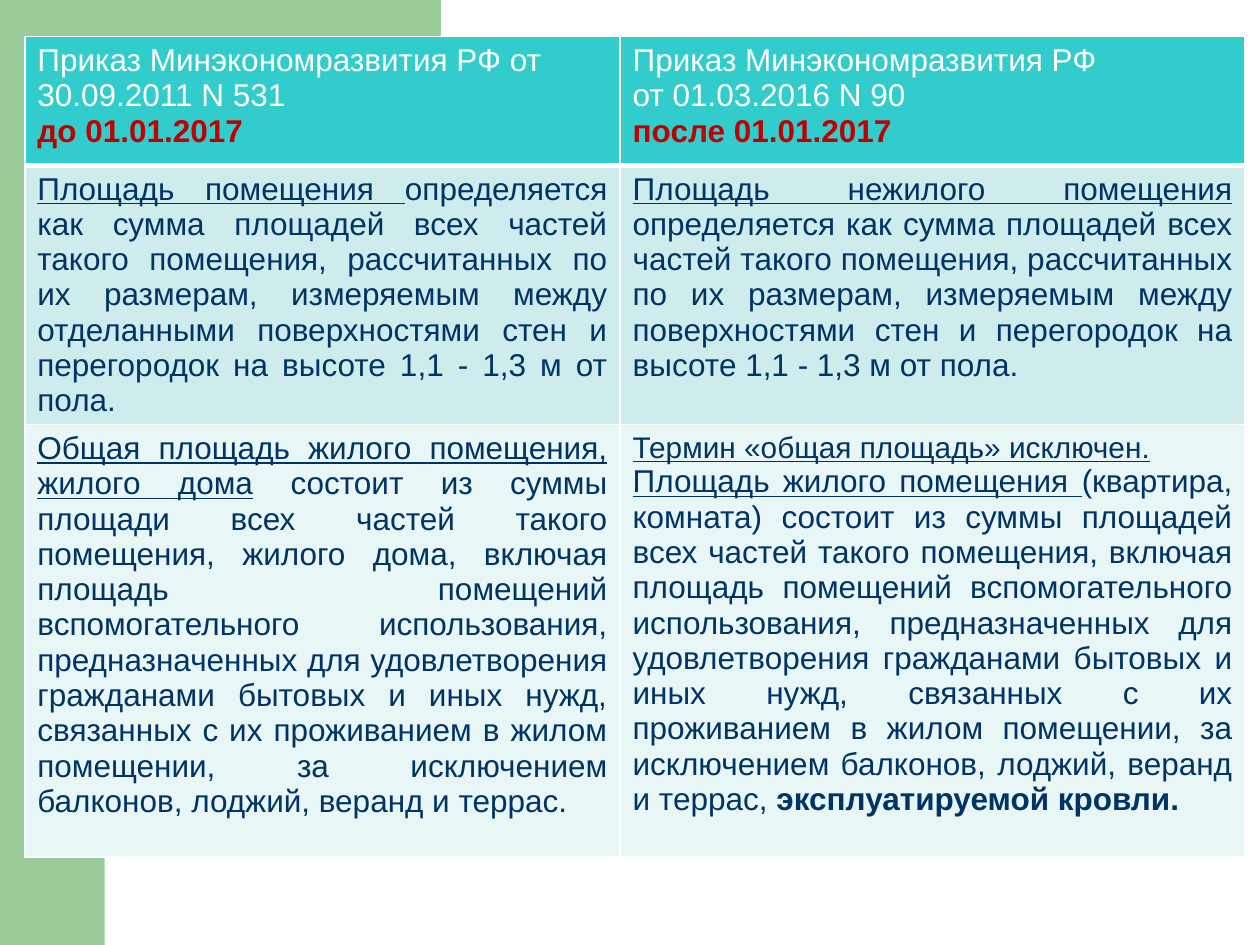
from lxml import etree
from pptx import Presentation
from pptx import util as u
from pptx.dml.color import RGBColor
from pptx.enum import shapes, text
from pptx.oxml.ns import qn

WHITE = RGBColor(0xFF, 0xFF, 0xFF)
NAVY = RGBColor(0x00, 0x33, 0x66)
RED = RGBColor(0xC0, 0x00, 0x00)
GREEN = RGBColor(0x99, 0xCC, 0x99)
TURQUOISE = RGBColor(0x33, 0xCC, 0xCC)
AQUA = RGBColor(0xCE, 0xEC, 0xEC)
PALE_AQUA = RGBColor(0xE8, 0xF6, 0xF6)

HEAD = {"color": WHITE}
DATE = {"color": RED, "bold": True}
TERM = {"underline": True}
SMALL_TERM = {"underline": True, "size": u.Pt(17)}
STRONG = {"bold": True}
PLAIN = {}

# Each cell is a list of paragraphs; each paragraph is a list of (wording, format).
ROWS = [
    (2.59, TURQUOISE, text.PP_ALIGN.LEFT, [
        [[("Приказ Минэкономразвития РФ от 30.09.2011 N 531", HEAD)],
         [("до 01.01.2017", DATE)]],
        [[("Приказ Минэкономразвития РФ", HEAD)],
         [("от 01.03.2016 N 90", HEAD)],
         [("после 01.01.2017", DATE)]],
    ]),
    (5.23, AQUA, text.PP_ALIGN.JUSTIFY, [
        [[("Площадь помещения ", TERM),
          ("определяется как сумма площадей всех частей такого помещения, "
           "рассчитанных по их размерам, измеряемым между отделанными "
           "поверхностями стен и перегородок на высоте 1,1 - 1,3 м от пола.", PLAIN)]],
        [[("Площадь нежилого помещения ", TERM),
          ("определяется как сумма площадей всех частей такого помещения, "
           "рассчитанных по их размерам, измеряемым между "
           "поверхностями стен и перегородок на высоте 1,1 - 1,3 м от пола.", PLAIN)]],
    ]),
    (8.71, PALE_AQUA, text.PP_ALIGN.JUSTIFY, [
        [[("Общая площадь жилого помещения, жилого дома", TERM),
          (" состоит из суммы площади всех частей такого помещения, жилого дома, "
           "включая площадь помещений вспомогательного использования, "
           "предназначенных для удовлетворения гражданами бытовых и иных нужд, "
           "связанных с их проживанием в жилом помещении, за исключением "
           "балконов, лоджий, веранд и террас.", PLAIN)]],
        [[("Термин «общая площадь» исключен.", SMALL_TERM)],
         [("Площадь жилого помещения ", TERM),
          ("(квартира, комната) состоит из суммы площадей всех частей такого "
           "помещения, включая площадь помещений вспомогательного использования, "
           "предназначенных для удовлетворения гражданами бытовых и иных нужд, "
           "связанных с их проживанием в жилом помещении, за исключением "
           "балконов, лоджий, веранд и террас, ", PLAIN),
          ("эксплуатируемой кровли.", STRONG)]],
    ]),
]
COLUMN_WIDTHS = [12, 12.6]
CORNER = [(1.27, 0), (8.89, 0), (8.89, 2.12), (2.95, 2.13), (2.62, 2.16),
          (2.36, 2.34), (2.18, 2.64), (2.11, 2.95), (2.11, 3.25), (1.27, 3.25)]


class SlideBuilder:
    base = {"name": "Arial", "size": u.Pt(18), "color": NAVY,
            "bold": False, "underline": False}

    def __init__(self, slide):
        self.slide = slide

    def paint(self, shape, color):
        shape.shadow.inherit = False
        shape.fill.solid()
        shape.fill.fore_color.rgb = color
        shape.line.fill.background()

    def rectangle(self, left, top, width, height, color):
        box = self.slide.shapes.add_shape(
            shapes.MSO_SHAPE.RECTANGLE, *map(u.Cm, (left, top, width, height)))
        self.paint(box, color)

    def outline(self, points, color):
        start, *rest = [(u.Cm(x), u.Cm(y)) for x, y in points]
        builder = self.slide.shapes.build_freeform(*start)
        builder.add_line_segments(rest, close=True)
        self.paint(builder.convert_to_shape(), color)

    def add_text(self, frame, paragraphs, align):
        for index, spans in enumerate(paragraphs):
            para = frame.paragraphs[0] if index == 0 else frame.add_paragraph()
            para.alignment = align
            for wording, changes in spans:
                span = para.add_run()
                span.text = wording
                values = {**self.base, **changes}
                span.font.color.rgb = values.pop("color")
                for key, value in values.items():
                    setattr(span.font, key, value)

    def borders(self, cell, top, bottom):
        """Draw white cell borders; top and bottom are widths in points."""
        properties = cell._tc.get_or_add_tcPr()
        widths = {"lnL": 1, "lnR": 1, "lnT": top, "lnB": bottom}
        for index, (tag, width) in enumerate(widths.items()):
            line = etree.Element(qn(f"a:{tag}"), w=str(u.Pt(width)))
            fill = etree.SubElement(line, qn("a:solidFill"))
            etree.SubElement(fill, qn("a:srgbClr"), val=str(WHITE))
            properties.insert(index, line)

    def table(self, left, top, widths, rows):
        height = sum(row[0] for row in rows)
        frame = self.slide.shapes.add_table(
            len(rows), len(widths), u.Cm(left), u.Cm(top),
            u.Cm(sum(widths)), u.Cm(height))
        table = frame.table
        table.first_row = table.horz_banding = False
        for column, width in zip(table.columns, widths):
            column.width = u.Cm(width)
        for index, (row_height, color, align, cells) in enumerate(rows):
            table.rows[index].height = u.Cm(row_height)
            for cell, paragraphs in zip(table.rows[index].cells, cells):
                cell.fill.solid()
                cell.fill.fore_color.rgb = color
                self.borders(cell, top=3 if index == 1 else 1,
                             bottom=3 if index == 0 else 1)
                self.add_text(cell.text_frame, paragraphs, align)


def main():
    deck = Presentation()
    deck.slide_width, deck.slide_height = u.Cm(25.4), u.Cm(19.05)
    page = SlideBuilder(deck.slides.add_slide(deck.slide_layouts[6]))
    page.rectangle(0, 0, 2.11, 19.05, GREEN)
    page.outline(CORNER, GREEN)
    page.table(0.5, 0.74, COLUMN_WIDTHS, ROWS)
    deck.save("out.pptx")


if __name__ == "__main__":
    main()
